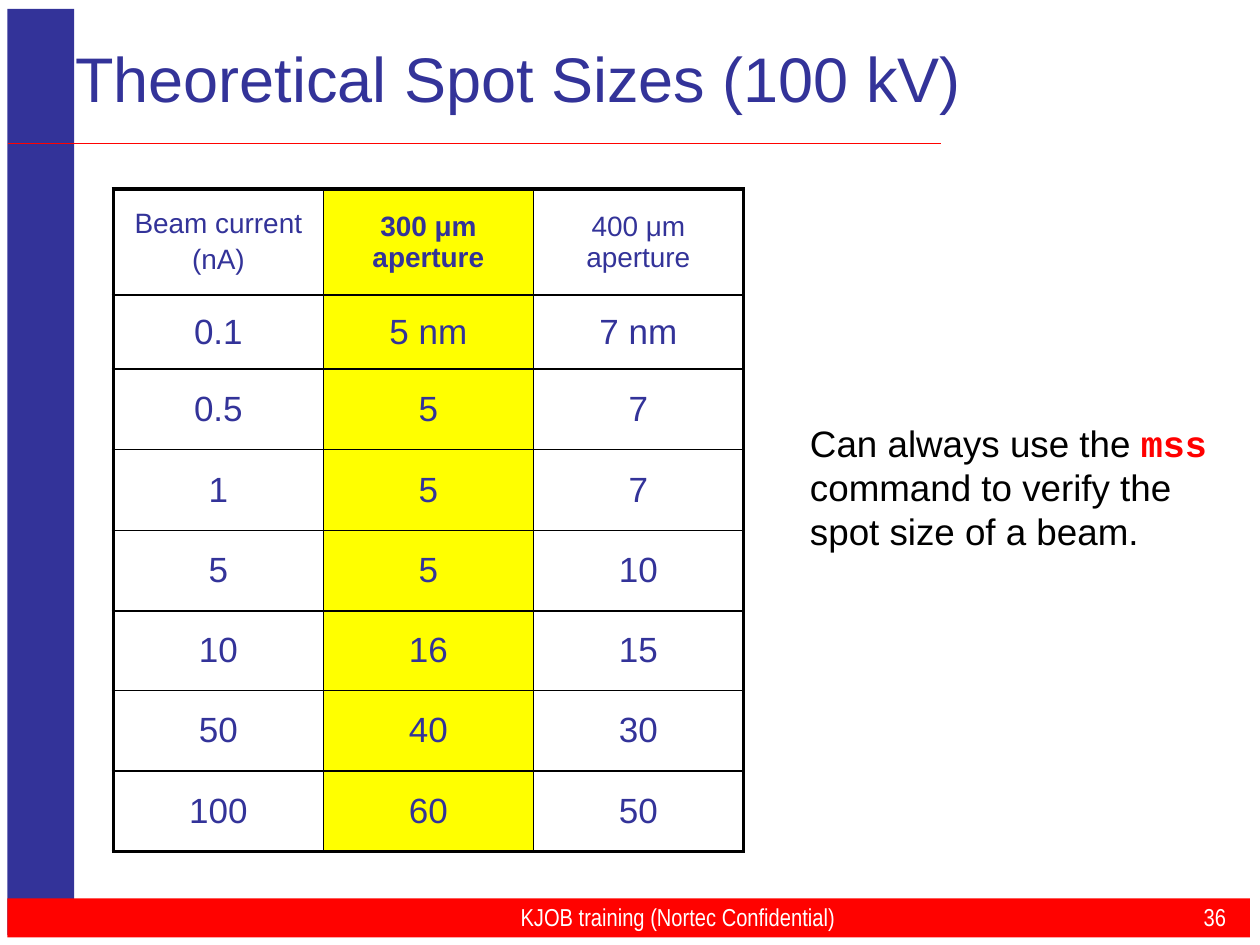
"""Build the slide on theoretical beam spot sizes at 100 kV."""
from lxml.etree import SubElement
from pptx import Presentation
from pptx.dml.color import RGBColor
from pptx.enum.shapes import MSO_CONNECTOR, MSO_SHAPE
from pptx.enum.text import MSO_ANCHOR, PP_ALIGN
from pptx.oxml.ns import qn
from pptx.util import Inches, Pt

NAVY = RGBColor(0x33, 0x33, 0x99)
RED = RGBColor(0xFF, 0x02, 0x00)
COMMAND_RED = RGBColor(0xFF, 0x00, 0x00)
YELLOW = RGBColor(0xFF, 0xFF, 0x00)
WHITE = RGBColor(0xFF, 0xFF, 0xFF)
BLACK = RGBColor(0x00, 0x00, 0x00)

TITLE = "Theoretical Spot Sizes (100 kV)"
FOOTER = "KJOB training (Nortec Confidential)"
PAGE_NUMBER = "36"
NOTE = [
    ("Can always use the ", {}),
    ("mss ", {"font": "Courier New", "color": COMMAND_RED, "bold": True}),
    ("command to verify the spot size of a beam.", {}),
]
SPOT_SIZES = [
    ("Beam current\n(nA)", "300 μm aperture", "400 μm aperture"),
    ("0.1", "5 nm", "7 nm"),
    ("0.5", "5", "7"),
    ("1", "5", "7"),
    ("5", "5", "10"),
    ("10", "16", "15"),
    ("50", "40", "30"),
    ("100", "60", "50"),
]
ROW_HEIGHTS = [0.84, 0.59, 0.64, 0.64, 0.64, 0.63, 0.64, 0.64]
HIGHLIGHT_COLUMN = 1
TABLE_WIDTH = 5
OUTER_BORDER, INNER_BORDER = 2.25, 1


def add_run(paragraph, text, size, color, font="Arial", bold=False):
    run = paragraph.add_run()
    run.text = text
    run.font.size = Pt(size)
    run.font.name = font
    run.font.bold = bold
    run.font.color.rgb = color


def add_text(slide, box, runs, size, color, font="Arial",
             align=PP_ALIGN.LEFT, anchor=MSO_ANCHOR.MIDDLE):
    frame = slide.shapes.add_textbox(*map(Inches, box)).text_frame
    frame.word_wrap = True
    frame.vertical_anchor = anchor
    paragraph = frame.paragraphs[0]
    paragraph.alignment = align
    for text, changes in runs:
        add_run(paragraph, text, **{"size": size, "color": color, "font": font, **changes})


def add_bar(slide, box, color):
    shape = slide.shapes.add_shape(MSO_SHAPE.RECTANGLE, *map(Inches, box))
    shape.shadow.inherit = False
    shape.fill.solid()
    shape.fill.fore_color.rgb = color
    shape.line.fill.background()


def add_rule(slide, left, right, top):
    line = slide.shapes.add_connector(
        MSO_CONNECTOR.STRAIGHT, Inches(left), Inches(top), Inches(right), Inches(top))
    line.line.color.rgb = RED
    line.line.width = Pt(1)
    SubElement(line._element.spPr, qn("a:effectLst"))


def set_borders(cell, outer_sides):
    properties = cell._tc.get_or_add_tcPr()
    for position, (side, is_outer) in enumerate(outer_sides.items()):
        width = Pt(OUTER_BORDER if is_outer else INNER_BORDER)
        border = properties.makeelement(qn(f"a:ln{side}"), {"w": str(width)})
        properties.insert(position, border)
        fill = SubElement(border, qn("a:solidFill"))
        SubElement(fill, qn("a:srgbClr"), val=str(BLACK))


def fill_cell(cell, text, size, bold, highlighted):
    cell.vertical_anchor = MSO_ANCHOR.MIDDLE
    if highlighted:
        cell.fill.solid()
        cell.fill.fore_color.rgb = YELLOW
    else:
        cell.fill.background()
    frame = cell.text_frame
    for index, line in enumerate(text.split("\n")):
        paragraph = frame.add_paragraph() if index else frame.paragraphs[0]
        paragraph.alignment = PP_ALIGN.CENTER
        if index:
            paragraph.space_before = Pt(0.2 * size)
        add_run(paragraph, line, size, NAVY, bold=bold)


def add_spot_table(slide, left, top):
    last_row, last_column = len(SPOT_SIZES) - 1, len(SPOT_SIZES[0]) - 1
    table = slide.shapes.add_table(
        last_row + 1, last_column + 1, Inches(left), Inches(top),
        Inches(TABLE_WIDTH), Inches(sum(ROW_HEIGHTS))).table
    table.first_row = table.horz_banding = False
    for row, height in zip(table.rows, ROW_HEIGHTS):
        row.height = Inches(height)
    for row, values in enumerate(SPOT_SIZES):
        for column, text in enumerate(values):
            cell = table.cell(row, column)
            highlighted = column == HIGHLIGHT_COLUMN
            is_header = row == 0
            fill_cell(cell, text, 16 if is_header else 20, is_header and highlighted, highlighted)
            set_borders(cell, {"L": column == 0, "R": column == last_column,
                               "T": is_header, "B": row == last_row})


def main():
    presentation = Presentation()
    presentation.slide_width, presentation.slide_height = Inches(10), Inches(7.5)
    slide = presentation.slides.add_slide(presentation.slide_layouts[6])
    add_bar(slide, (0.06, 0.07, 0.53, 7.35), NAVY)
    add_bar(slide, (0.06, 7.13, 9.86, 0.31), RED)
    add_rule(slide, 0.06, 7.47, 1.14)
    add_text(slide, (0.5, 0.24, 7.31, 0.75), [(TITLE, {})], 36, NAVY)
    footer_format = {"size": 14, "color": WHITE, "font": "Arial Narrow"}
    add_text(slide, (2.67, 7.15, 5.42, 0.25), [(FOOTER, {})],
             align=PP_ALIGN.CENTER, **footer_format)
    add_text(slide, (9, 7.15, 0.83, 0.25), [(PAGE_NUMBER, {})],
             align=PP_ALIGN.RIGHT, **footer_format)
    add_spot_table(slide, 0.9, 1.5)
    add_text(slide, (6.33, 3.29, 3.45, 1.16), NOTE, 21, BLACK, anchor=MSO_ANCHOR.TOP)
    presentation.save("out.pptx")


if __name__ == "__main__":
    main()
